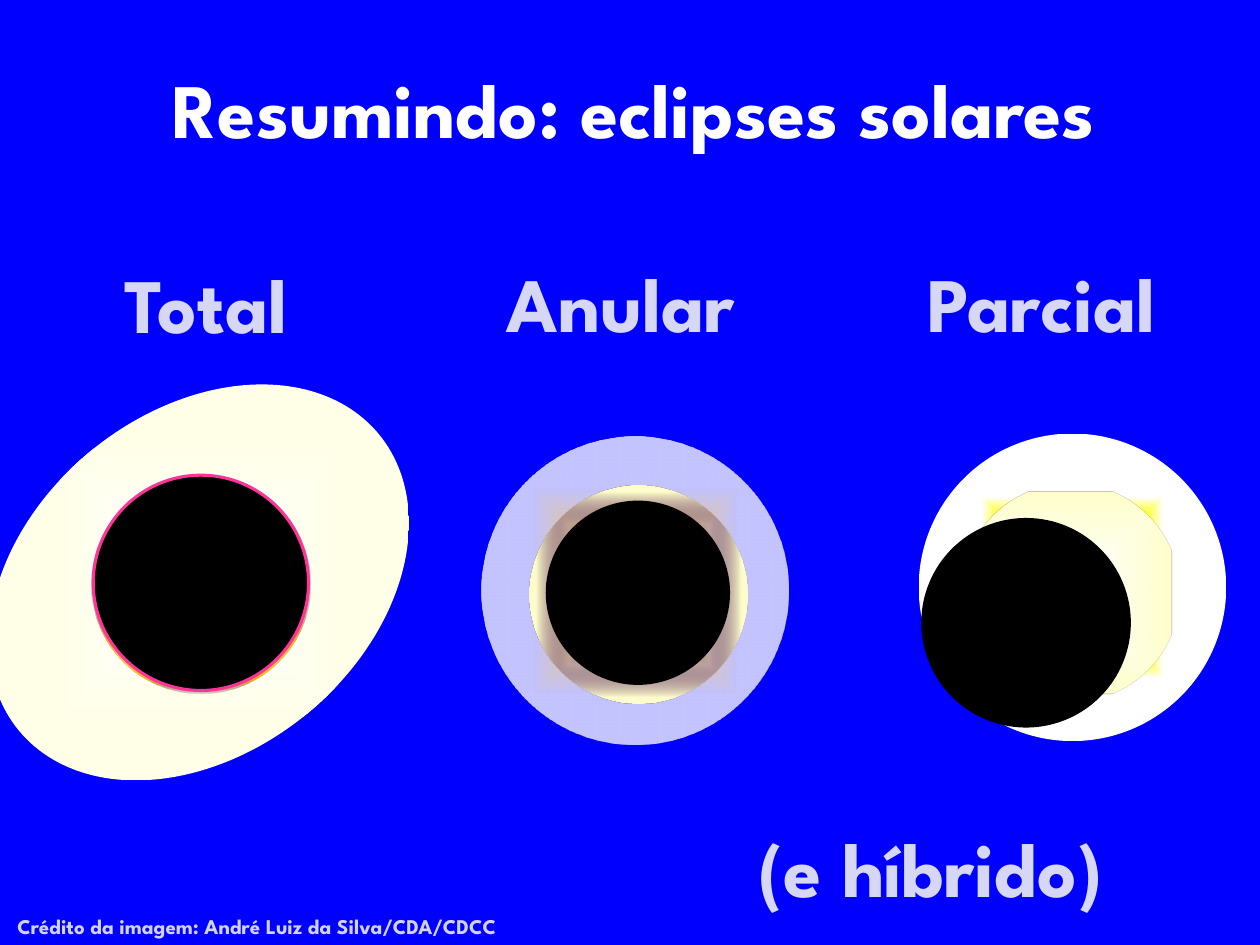
"""Build the slide that sums up the kinds of solar eclipse."""
from pptx import Presentation
from pptx.dml.color import RGBColor
from pptx.enum.shapes import MSO_SHAPE
from pptx.enum.text import MSO_ANCHOR, PP_ALIGN
from pptx.oxml import parse_xml
from pptx.oxml.ns import nsdecls, qn
from pptx.util import Cm, Pt

FONT = "League Spartan"
LABEL = "D6D6F5"
TEXTS = [
    ("Resumindo: eclipses solares", (0.79, 0.58, 24, 3.18), 44, "FFFFFF", 1, True),
    ("Total ", (1.4, 4.34, 5.94, 2.59), 44, LABEL, 1.5, True),
    ("Parcial ", (18.03, 4.32, 6.35, 2.59), 44, LABEL, 1.5, True),
    ("Anular ", (9.55, 4.72, 6.35, 1.78), 44, LABEL, 1.5, True),
    ("Crédito da imagem: André Luiz da Silva/CDA/CDCC",
     (0.1, 18.29, 13.41, 0.76), 12, "D2D2F4", 1, False),
    ("(e híbrido)", (13.89, 15.72, 9.75, 2.59), 44, LABEL, 1.5, True),
]
SUNS = [
    [((-0.69, 8.31, 9.4, 6.86), 320.6,
      [(7, "FFFFFF", 100), (52, "FFFFE7", 100), (100, "FFFFE7", 10)]),
     ((1.85, 9.58, 4.4, 4.4), 0,
      [(12, "FFFFFF", 100), (85, "FFC000", 100), (100, "4D0808", 17)])],
    [((9.7, 8.81, 6.2, 6.2), 0,
      [(0, "FFC000", 100), (67, "FFFFFF", 76), (100, "FFFFFF", 0)]),
     ((10.67, 9.78, 4.4, 4.4), 0,
      [(21, "FFFFFF", 100), (64, "4D0808", 17), (94, "FFFFCC", 100)])],
    [((18.52, 8.74, 6.2, 6.2), 0,
      [(46, "FFFF00", 100), (59, "FFFFFF", 100), (100, "FFFFFF", 14)]),
     ((19.38, 9.75, 4.4, 4.4), 0,
      [(12, "FFFFFF", 100), (92, "FFFFCC", 100), (93, "4D0808", 0)])],
]
MOONS = [
    (1.88, 9.58, 4.34, "FF3399", 1.75),
    (11.02, 10.11, 3.68, "000000", 1),
    (18.59, 10.46, 4.19, "000000", 1),
]


def paint(fill, tone):
    fill.solid()
    fill.fore_color.rgb = RGBColor.from_string(tone)


def oval(shapes, box):
    disc = shapes.add_shape(MSO_SHAPE.OVAL, *map(Cm, box))
    disc.shadow.inherit = False
    return disc


def glow(disc, stops):
    marks = "".join(
        f'<a:gs pos="{pos * 1000}"><a:srgbClr val="{tone}">'
        f'<a:alpha val="{alpha * 1000}"/></a:srgbClr></a:gs>'
        for pos, tone, alpha in stops)
    disc.fill.gradient()
    props = disc._element.spPr
    props.replace(props.find(qn("a:gradFill")), parse_xml(
        f'<a:gradFill {nsdecls("a")} rotWithShape="1"><a:gsLst>{marks}</a:gsLst>'
        '<a:path path="shape"><a:fillToRect l="50000" t="50000" r="50000" b="50000"/>'
        '</a:path></a:gradFill>'))


def write(slide, text, box, size, tone, space, mid):
    frame = slide.shapes.add_textbox(*map(Cm, box)).text_frame
    frame.word_wrap = True
    para = frame.paragraphs[0]
    para.line_spacing = space
    if mid:
        frame.vertical_anchor = MSO_ANCHOR.MIDDLE
        para.alignment = PP_ALIGN.CENTER
    run = para.add_run()
    run.text = text
    run.font.name = FONT
    run.font.size = Pt(size)
    run.font.bold = True
    run.font.color.rgb = RGBColor.from_string(tone)


def main():
    deck = Presentation()
    deck.slide_width, deck.slide_height = Cm(25.4), Cm(19.05)
    slide = deck.slides.add_slide(deck.slide_layouts[6])
    paint(slide.background.fill, "0000FF")
    for sun in SUNS:
        group = slide.shapes.add_group_shape()
        for box, turn, stops in sun:
            disc = oval(group.shapes, box)
            disc.rotation = turn
            disc.line.fill.background()
            glow(disc, stops)
    for left, top, size, edge, width in MOONS:
        moon = oval(slide.shapes, (left, top, size, size))
        paint(moon.fill, "000000")
        paint(moon.line.fill, edge)
        moon.line.width = Pt(width)
    for item in TEXTS:
        write(slide, *item)
    deck.save("out.pptx")


if __name__ == "__main__":
    main()
